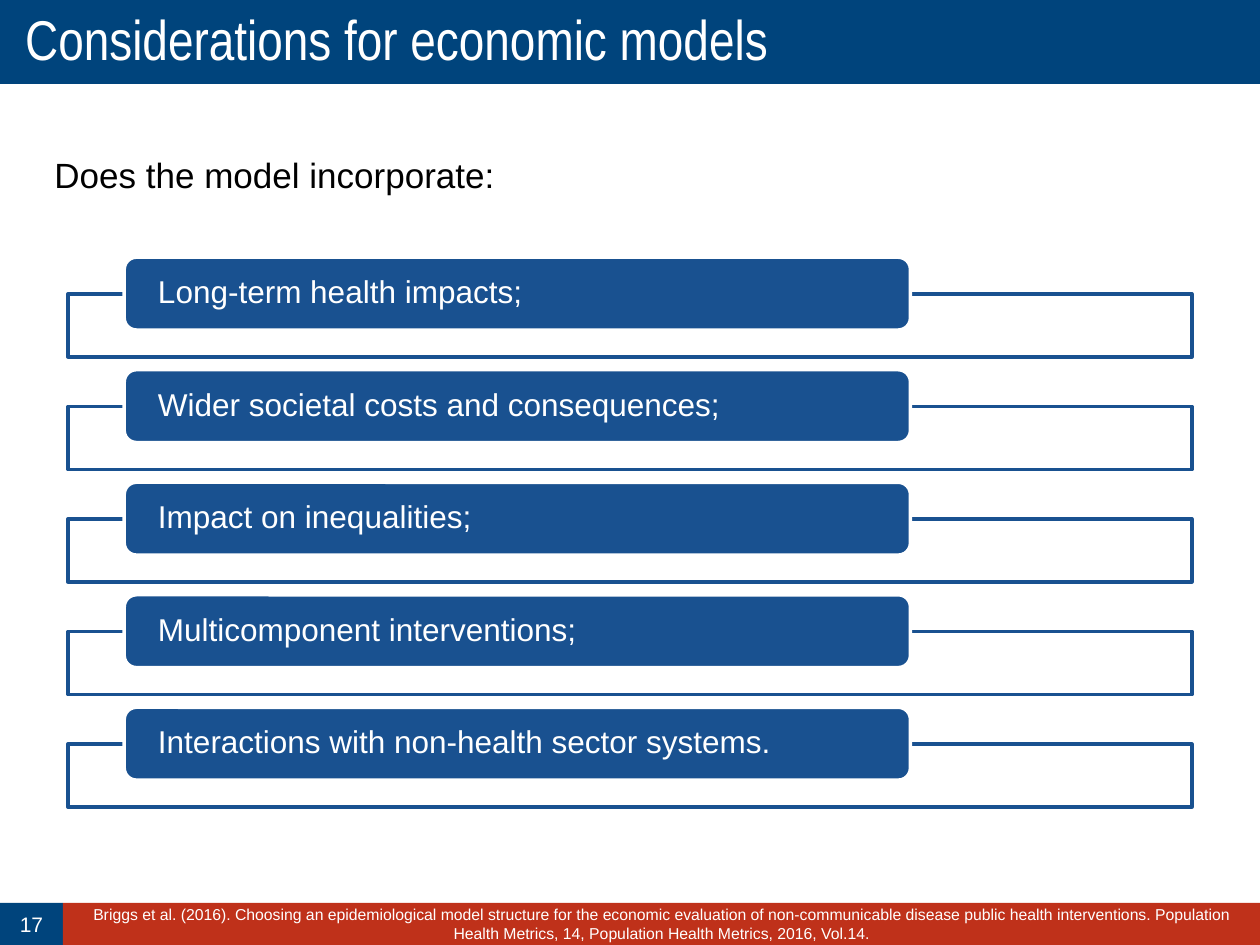
from pptx import Presentation
from pptx.dml.color import RGBColor as RGB
from pptx.enum.shapes import MSO_SHAPE as SHAPE
from pptx.enum.text import MSO_ANCHOR as ANCHOR, PP_ALIGN as ALIGN
from pptx.util import Pt

COLORS = {
    "navy": "00447C",
    "blue": "195190",
    "red": "BF311A",
    "white": "FFFFFF",
    "black": "000000",
}
WIDTH, HEIGHT = 720, 540


class Deck:
    """Holds the style and the current slide; lengths are in points."""

    def __init__(self, prs):
        self.font = "Arial"
        self.line_width = 2
        self.slide = prs.slides.add_slide(prs.slide_layouts[6])

    def color(self, name):
        return RGB.from_string(COLORS[name])

    def box(self, x, y, w, h, fill, line=None, kind=SHAPE.RECTANGLE):
        sp = self.slide.shapes.add_shape(kind, Pt(x), Pt(y), Pt(w), Pt(h))
        sp.shadow.inherit = False
        sp.fill.solid()
        sp.fill.fore_color.rgb = self.color(fill)
        if line:
            sp.line.color.rgb = self.color(line)
            sp.line.width = Pt(self.line_width)
        else:
            sp.line.fill.background()
        return sp

    def set_text(self, sp, text, size, color="white", font=None, align=ALIGN.LEFT,
                 anchor=ANCHOR.MIDDLE, inset=(7.2, 3.6), spacing=1.0):
        tf = sp.text_frame
        tf.word_wrap = True
        tf.vertical_anchor = anchor
        tf.margin_left = tf.margin_right = Pt(inset[0])
        tf.margin_top = tf.margin_bottom = Pt(inset[1])
        p = tf.paragraphs[0]
        p.text = text
        p.alignment = align
        p.line_spacing = spacing
        p.font.name = font or self.font
        p.font.size = Pt(size)
        p.font.color.rgb = self.color(color)
        return p

    def label(self, x, y, w, h, text, size, color):
        sp = self.slide.shapes.add_textbox(Pt(x), Pt(y), Pt(w), Pt(h))
        return self.set_text(sp, text, size, color, anchor=ANCHOR.TOP)

    def list_row(self, y, text):
        self.box(38.9, y + 21, 642.2, 36, "white", "blue")
        pill = self.box(71, y, 449.3, 41.6, "blue", "white", SHAPE.ROUNDED_RECTANGLE)
        self.set_text(pill, text, 18, inset=(17.3, 0), spacing=0.9)


def main():
    prs = Presentation()
    prs.slide_width, prs.slide_height = Pt(WIDTH), Pt(HEIGHT)
    deck = Deck(prs)

    # Title band
    band = deck.box(0, 0, WIDTH, 48, "navy")
    deck.set_text(band, "Considerations for economic models", 32,
                  font="Arial Narrow", inset=(14.4, 7.2), spacing=0.9)

    # Lead-in question
    lead = deck.label(24, 84, 660, 36, "Does the model incorporate:", 20, "black")
    lead.space_before = Pt(4)

    # List of considerations
    items = [
        "Long-term health impacts;",
        "Wider societal costs and consequences;",
        "Impact on inequalities;",
        "Multicomponent interventions;",
        "Interactions with non-health sector systems.",
    ]
    top, pitch = 147, 64.3
    for i, item in enumerate(items):
        deck.list_row(top + i * pitch, item)

    # Footer: page number and reference
    foot_y, foot_h, number_w = 516, 24, 36
    number = deck.box(0, foot_y, number_w, foot_h, "navy")
    deck.set_text(number, "17", 12, align=ALIGN.CENTER)
    reference = deck.box(number_w, foot_y, WIDTH - number_w, foot_h, "red")
    deck.set_text(
        reference,
        "Briggs et al. (2016). Choosing an epidemiological model structure for the "
        "economic evaluation of non-communicable disease public health interventions. "
        "Population Health Metrics, 14, Population Health Metrics, 2016, Vol.14.",
        9, align=ALIGN.CENTER)

    prs.save("out.pptx")


if __name__ == "__main__":
    main()
